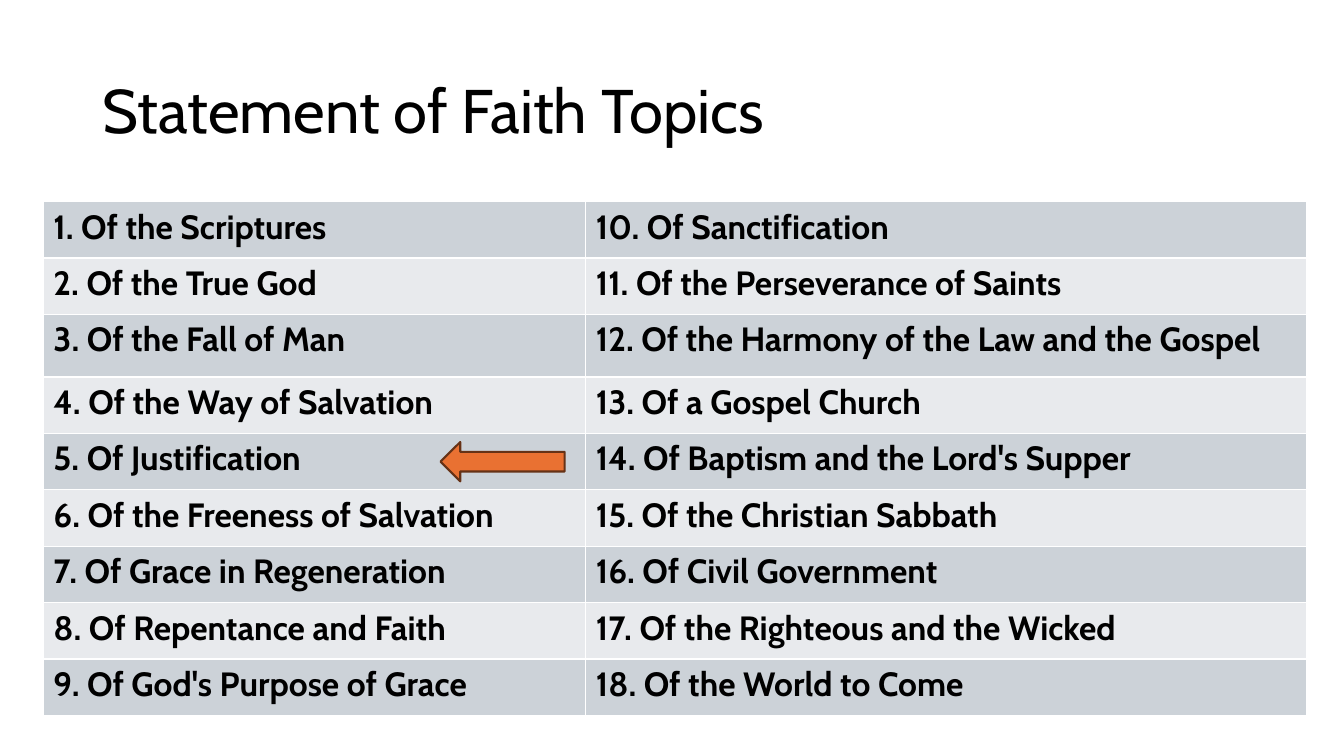
from lxml.etree import SubElement
from pptx import Presentation
from pptx.dml.color import RGBColor
from pptx.enum.shapes import MSO_SHAPE
from pptx.enum.text import MSO_ANCHOR
from pptx.oxml.ns import qn
from pptx.util import Inches, Pt

HEADING = "Statement of Faith Topics"
TOPICS = [
    "Of the Scriptures",
    "Of the True God",
    "Of the Fall of Man",
    "Of the Way of Salvation",
    "Of Justification",
    "Of the Freeness of Salvation",
    "Of Grace in Regeneration",
    "Of Repentance and Faith",
    "Of God's Purpose of Grace",
    "Of Sanctification",
    "Of the Perseverance of Saints",
    "Of the Harmony of the Law and the Gospel",
    "Of a Gospel Church",
    "Of Baptism and the Lord's Supper",
    "Of the Christian Sabbath",
    "Of Civil Government",
    "Of the Righteous and the Wicked",
    "Of the World to Come",
]
CURRENT_ROW = 4

FONT = "Cabin"
BLACK = RGBColor(0x00, 0x00, 0x00)
WHITE = RGBColor(0xFF, 0xFF, 0xFF)
BANDS = [RGBColor(0xCC, 0xD2, 0xD8), RGBColor(0xE8, 0xEA, 0xED)]
ORANGE = RGBColor(0xE9, 0x71, 0x32)
BROWN = RGBColor(0x66, 0x32, 0x16)

COLUMNS = [5.38, 7.15]
ROWS = [0.56] * 9
ROWS[2] = 0.62
LEFT, TOP = 0.43, 2
ARROW_WIDTH, ARROW_HEIGHT, ARROW_GAP = 1.23, 0.39, 0.21


def style(paragraph, size, bold):
    for run in paragraph.runs:
        run.font.name = FONT
        run.font.size = Pt(size)
        run.font.bold = bold
        run.font.color.rgb = BLACK


def add_borders(cell):
    properties = cell._tc.get_or_add_tcPr()
    for side in ("a:lnL", "a:lnR", "a:lnT", "a:lnB"):
        border = SubElement(properties, qn(side), w=str(Pt(1)))
        fill = SubElement(border, qn("a:solidFill"))
        SubElement(fill, qn("a:srgbClr"), val=str(WHITE))


def add_heading(slide):
    heading = slide.shapes.title
    heading.left, heading.top = Inches(0.92), Inches(0.4)
    heading.width, heading.height = Inches(11.5), Inches(1.45)
    frame = heading.text_frame
    frame.text = HEADING
    frame.word_wrap = True
    frame.vertical_anchor = MSO_ANCHOR.MIDDLE
    line = frame.paragraphs[0]
    line.alignment = 1
    line.line_spacing = 0.9
    style(line, 44, False)


def add_topics(slide):
    topics = slide.shapes.add_table(
        len(ROWS), len(COLUMNS), Inches(LEFT), Inches(TOP),
        Inches(sum(COLUMNS)), Inches(sum(ROWS))).table
    for column, width in zip(topics.columns, COLUMNS):
        column.width = Inches(width)
    for row, height in zip(topics.rows, ROWS):
        row.height = Inches(height)
    for index, topic in enumerate(TOPICS):
        column, row = divmod(index, len(ROWS))
        cell = topics.cell(row, column)
        cell.text_frame.text = f"{index + 1}. {topic}"
        style(cell.text_frame.paragraphs[0], 24, True)
        add_borders(cell)
        cell.fill.solid()
        cell.fill.fore_color.rgb = BANDS[row % 2]


def add_marker(slide):
    middle = TOP + sum(ROWS[:CURRENT_ROW]) + ROWS[CURRENT_ROW] / 2
    marker = slide.shapes.add_shape(
        MSO_SHAPE.LEFT_ARROW,
        Inches(LEFT + COLUMNS[0] - ARROW_GAP - ARROW_WIDTH),
        Inches(middle - ARROW_HEIGHT / 2),
        Inches(ARROW_WIDTH), Inches(ARROW_HEIGHT))
    marker.shadow.inherit = False
    marker.fill.solid()
    marker.fill.fore_color.rgb = ORANGE
    marker.line.color.rgb = BROWN
    marker.line.width = Pt(1.5)


def main():
    deck = Presentation()
    deck.slide_width, deck.slide_height = Inches(13.33), Inches(7.5)
    slide = deck.slides.add_slide(deck.slide_layouts[5])
    add_heading(slide)
    add_topics(slide)
    add_marker(slide)
    deck.save("out.pptx")


if __name__ == "__main__":
    main()
